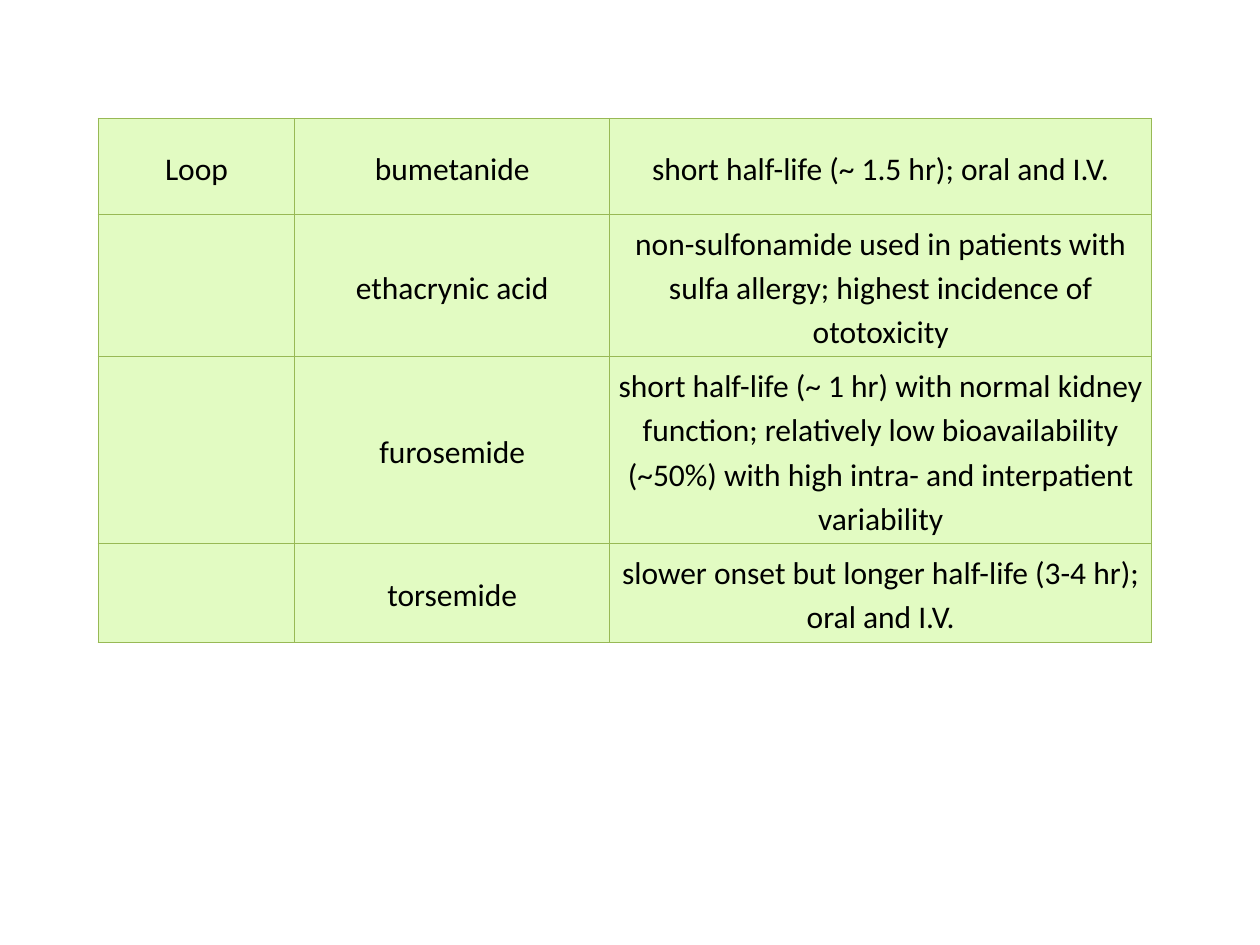
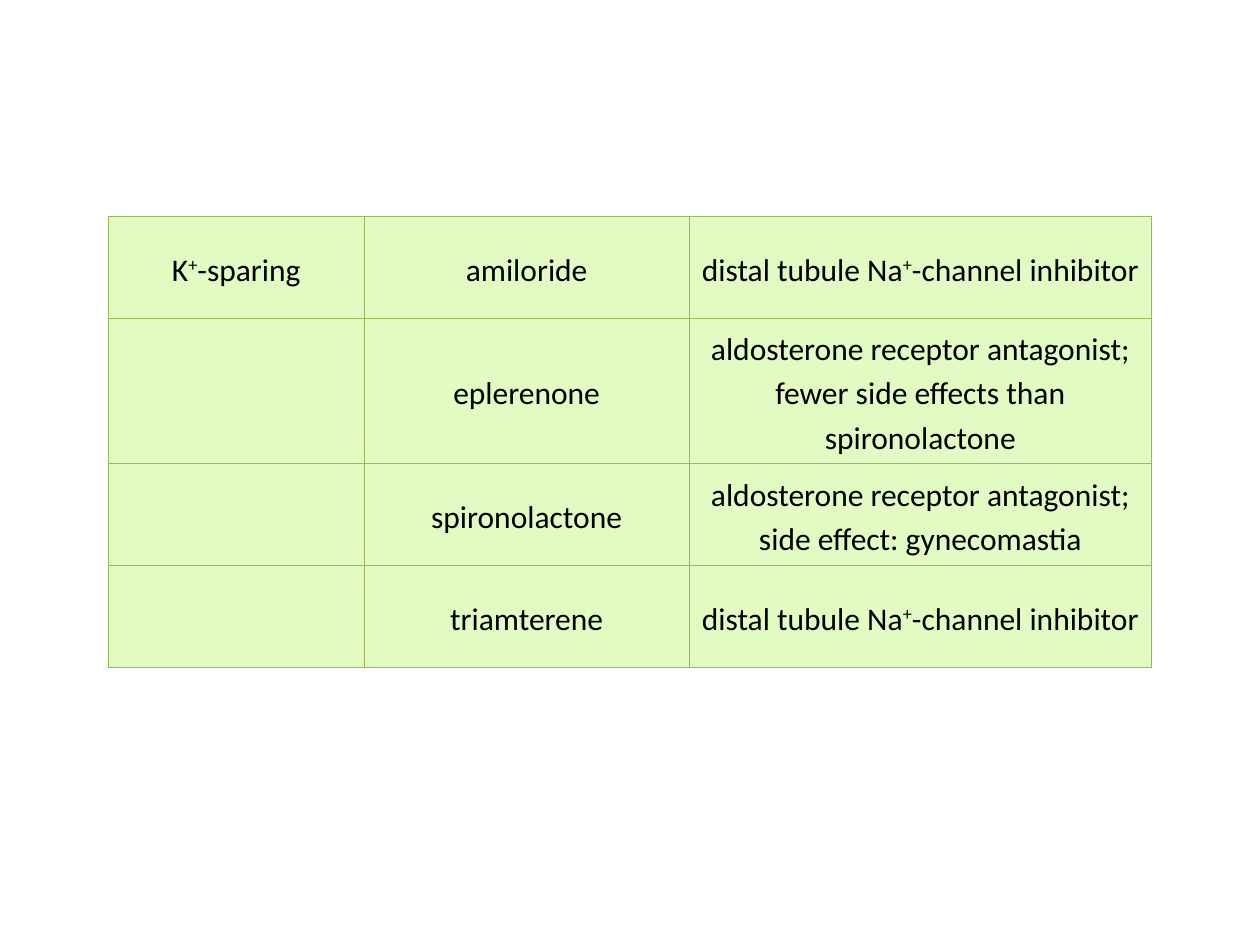
from pptx import Presentation
from pptx.dml.color import RGBColor as RGB
from pptx.enum.text import MSO_ANCHOR as ANCHOR, PP_ALIGN as ALIGN
from pptx.oxml.ns import qn
from pptx.util import Inches, Pt
from lxml.etree import SubElement

COLORS = {"fill": "E2FBC2", "border": "98B955", "text": "000000"}


class Deck:
    font, size, inset = "Calibri", Pt(18), Inches(0.04)

    def __init__(self, prs):
        self.prs = prs
        self.s = None

    def slide(self):
        self.s = self.prs.slides.add_slide(self.prs.slide_layouts[6])

    def run(self, p, text, raised=False):
        r = p.add_run()
        r.text = text
        r.font.name, r.font.size = self.font, self.size
        r.font.color.rgb = RGB.from_string(COLORS["text"])
        if raised:
            r.font._element.set("baseline", "30000")

    def borders(self, cell):
        tcPr = cell._tc.get_or_add_tcPr()
        for side in ("lnL", "lnR", "lnT", "lnB"):
            ln = SubElement(tcPr, qn(f"a:{side}"), w=str(Pt(0.75)))
            fill = SubElement(ln, qn("a:solidFill"))
            SubElement(fill, qn("a:srgbClr"), val=COLORS["border"])

    def cell(self, cell, text):
        self.borders(cell)
        cell.fill.solid()
        cell.fill.fore_color.rgb = RGB.from_string(COLORS["fill"])
        cell.vertical_anchor = ANCHOR.MIDDLE
        cell.margin_left = cell.margin_right = self.inset
        cell.margin_top = cell.margin_bottom = self.inset
        if not text:
            return
        p = cell.text_frame.paragraphs[0]
        p.alignment, p.line_spacing, p.space_after = ALIGN.CENTER, 1.15, Pt(10)
        # The plus sign of an ion is superscript
        before, plus, after = text.partition("+")
        self.run(p, before)
        if plus:
            self.run(p, plus, raised=True)
            self.run(p, after)

    def drug_table(self, left, top, widths, heights, drug_class, drugs):
        sp = self.s.shapes.add_table(
            len(heights), len(widths), Inches(left), Inches(top),
            Inches(sum(widths)), Inches(sum(heights)))
        table = sp.table
        table.first_row = table.horz_banding = False
        for col, width in zip(table.columns, widths):
            col.width = Inches(width)
        for row, height in zip(table.rows, heights):
            row.height = Inches(height)
        for i, (drug, note) in enumerate(drugs):
            texts = ("" if i else drug_class, drug, note)
            for cell, text in zip(table.rows[i].cells, texts):
                self.cell(cell, text)


def main():
    prs = Presentation()
    prs.slide_width, prs.slide_height = Inches(10), Inches(7.5)
    deck = Deck(prs)

    # Loop diuretics
    deck.slide()
    deck.drug_table(0.78, 0.94, (1.56, 2.5, 4.3), (0.76, 1.12, 1.46, 0.78), "Loop", [
        ("bumetanide", "short half-life (~ 1.5 hr); oral and I.V."),
        ("ethacrynic acid", "non-sulfonamide used in patients with sulfa allergy; "
                            "highest incidence of ototoxicity"),
        ("furosemide", "short half-life (~ 1 hr) with normal kidney function; "
                       "relatively low bioavailability (~50%) with high intra- "
                       "and interpatient variability"),
        ("torsemide", "slower onset but longer half-life (3-4 hr); oral and I.V."),
    ])

    # Potassium-sparing diuretics
    channel_inhibitor = "distal tubule Na+-channel inhibitor"
    antagonist = "aldosterone receptor antagonist; "
    deck.slide()
    deck.drug_table(0.86, 1.72, (2.03, 2.58, 3.67), (0.81, 1.15, 0.81, 0.81), "K+-sparing", [
        ("amiloride", channel_inhibitor),
        ("eplerenone", antagonist + "fewer side effects than spironolactone"),
        ("spironolactone", antagonist + "side effect: gynecomastia"),
        ("triamterene", channel_inhibitor),
    ])

    prs.save("out.pptx")


if __name__ == "__main__":
    main()
